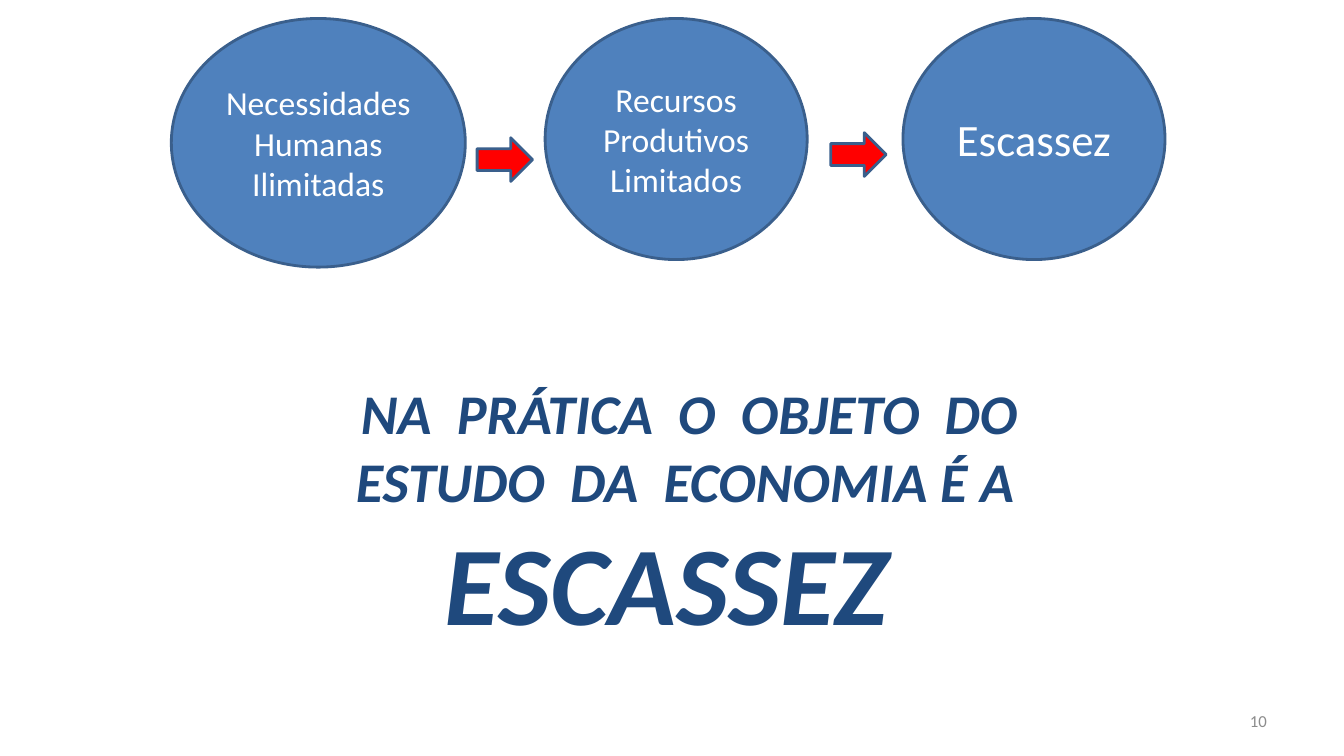
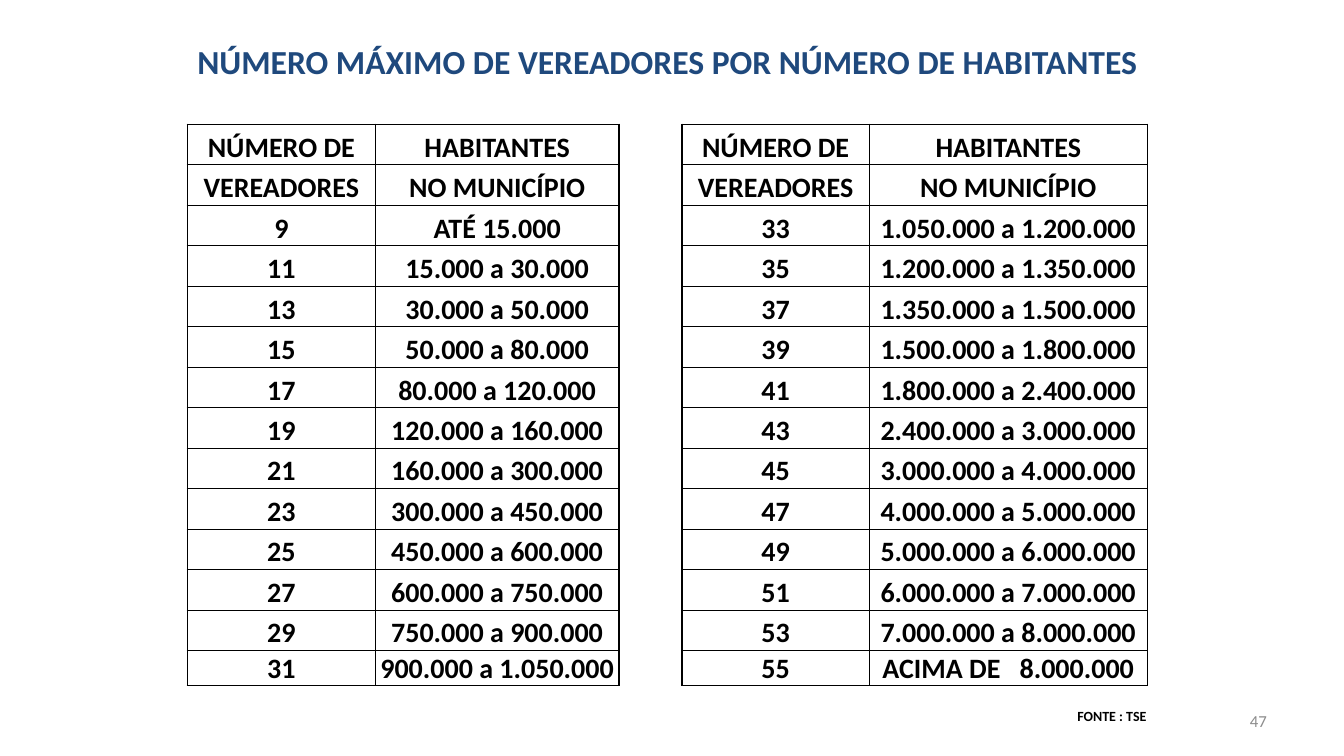
from itertools import pairwise

from lxml import etree
from pptx import Presentation, util as u
from pptx.dml.color import RGBColor
from pptx.enum import shapes, text
from pptx.oxml import ns

# Grid: 160 columns by 90 rows, each cell a twelfth of an inch
COLUMNS, ROWS = 160, 90
CELL = u.Inches(1) // 12

NAVY = RGBColor(0x1F, 0x49, 0x7D)
BLUE = RGBColor(0x4F, 0x81, 0xBD)
OUTLINE = RGBColor(0x3A, 0x5F, 0x8C)
RED = RGBColor(0xFF, 0x00, 0x00)
WHITE = RGBColor(0xFF, 0xFF, 0xFF)
BLACK = RGBColor(0x00, 0x00, 0x00)
GRAY = RGBColor(0x8C, 0x8C, 0x8C)

LEFT, CENTER, RIGHT = text.PP_ALIGN.LEFT, text.PP_ALIGN.CENTER, text.PP_ALIGN.RIGHT
MIDDLE, BOTTOM = text.MSO_ANCHOR.MIDDLE, text.MSO_ANCHOR.BOTTOM
NO_GRID_STYLE = "{2D5ABB26-0587-4C30-8999-92F81FD0307C}"


def cells(count):
    return u.Emu(round(count * CELL))


class Slides:
    """Shared style, the deck and its current page."""

    font = "Calibri"

    def __init__(self):
        self.deck = Presentation()
        self.deck.slide_width = cells(COLUMNS)
        self.deck.slide_height = cells(ROWS)

    def new_page(self, number):
        self.page = self.deck.slides.add_slide(self.deck.slide_layouts[6])
        self.text_box((114.7, 83.4, 37.3, 4.8), [str(number)], 12, GRAY, RIGHT, MIDDLE)

    def set_text(self, frame, lines, size, color, align, bold=False, italic=False):
        frame.text = "\n".join(lines)
        for para in frame.paragraphs:
            para.alignment = align
            for span in para.runs:
                font = span.font
                font.name, font.size = self.font, u.Pt(size)
                font.bold, font.italic = bold, italic
                font.color.rgb = color

    def text_box(self, area, lines, size, color, align, anchor, **style):
        box = self.page.shapes.add_textbox(*map(cells, area))
        frame = box.text_frame
        frame.word_wrap = True
        frame.vertical_anchor = anchor
        self.set_text(frame, lines, size, color, align, **style)
        return frame

    def shape(self, preset, area, fill, lines=(), size=24):
        shape = self.page.shapes.add_shape(preset, *map(cells, area))
        shape.shadow.inherit = False
        shape.fill.solid()
        shape.fill.fore_color.rgb = fill
        shape.line.color.rgb = OUTLINE
        shape.line.width = u.Pt(2)
        if lines:
            shape.text_frame.vertical_anchor = MIDDLE
            self.set_text(shape.text_frame, lines, size, WHITE, CENTER)

    def table(self, left, top, widths, heights):
        area = (left, top, sum(widths), sum(heights))
        table = self.page.shapes.add_table(
            len(heights), len(widths), *map(cells, area)).table
        table.first_row = table.horz_banding = False
        table._tbl.tblPr.find(ns.qn("a:tableStyleId")).text = NO_GRID_STYLE
        for column, width in zip(table.columns, widths):
            column.width = cells(width)
        for row, height in zip(table.rows, heights):
            row.height = cells(height)
        for cell in table.iter_cells():
            cell.margin_left = cell.margin_right = cell.margin_top = u.Inches(0.01)
            cell.margin_bottom = 0
            cell.vertical_anchor = BOTTOM
            cell.fill.background()
            # A small end mark lets empty rows stay low
            etree.SubElement(cell.text_frame.paragraphs[0]._p,
                             ns.qn("a:endParaRPr"), sz="800")
        return table

    def cell_text(self, cell, words, size=20, color=BLACK, align=CENTER):
        self.set_text(cell.text_frame, [words], size, color, align, bold=True)

    def cell_borders(self, cell, weights):
        """Draw the sides named in weights (L, R, T, B), in points."""
        props = cell._tc.get_or_add_tcPr()
        sides = [(side, weights[side]) for side in "LRTB" if weights.get(side)]
        for place, (side, points) in enumerate(sides):
            line = etree.Element(ns.qn(f"a:ln{side}"), w=str(u.Pt(points)))
            fill = etree.SubElement(line, ns.qn("a:solidFill"))
            etree.SubElement(fill, ns.qn("a:srgbClr"), val=str(BLACK))
            props.insert(place, line)


def scarcity_page(slides):
    slides.new_page(10)

    # Closing statement, each line with its own indent
    frame = slides.text_box(
        (27.8, 41.3, 106.8, 36.4),
        ["NA  PRÁTICA  O  OBJETO  DO", "ESTUDO  DA  ECONOMIA É A", "ESCASSEZ"],
        40, NAVY, LEFT, BOTTOM, bold=True, italic=True)
    for para, indent in zip(frame.paragraphs, (14, 13.4, 24)):
        props = para._p.get_or_add_pPr()
        props.set("marL", str(cells(indent)))
        props.set("indent", "0")
    frame.paragraphs[-1].runs[0].font.size = u.Pt(80)

    # Chain of ideas
    oval = shapes.MSO_SHAPE.OVAL
    top = 2.2
    slides.shape(oval, (20.4, top, 35, 29.6), BLUE,
                 ["Necessidades Humanas", "Ilimitadas"])
    slides.shape(oval, (64.9, top, 31.2, 28.7), BLUE,
                 ["Recursos", "Produtivos", "Limitados"])
    slides.shape(oval, (107.5, top, 31.2, 28.7), BLUE, ["Escassez"], 32)
    for left, arrow_top in ((56.8, 16.4), (98.9, 15.8)):
        slides.shape(shapes.MSO_SHAPE.RIGHT_ARROW, (left, arrow_top, 6.6, 5.2), RED)


def councillors_page(slides):
    slides.new_page(47)
    widths = (22.4, 29, 7.5, 22.3, 33.1)
    heights = [2.2, 5.2, 4.9] + [4.82] * 13 + [4.1, 4.8]
    table = slides.table(22.3, 2.5, widths, heights)
    title_row, head, first, per_block = 1, 3, 5, 12
    last_edge = first + per_block

    # Title and source
    title = table.cell(title_row, 0)
    title.merge(table.cell(title_row, len(widths) - 1))
    slides.cell_text(title, "NÚMERO MÁXIMO DE VEREADORES POR NÚMERO DE HABITANTES",
                     24, NAVY)
    slides.cell_text(table.cell(last_edge, 4), "FONTE : TSE", 10, align=RIGHT)

    # Population bands, in thousands
    limits = (15, 30, 50, 80, 120, 160, 300, 450, 600, 750, 900, 1050, 1200, 1350,
              1500, 1800, 2400, 3000, 4000, 5000, 6000, 7000, 8000)
    labels = [f"{limit * 1000:,}".replace(",", ".") for limit in limits]
    bands = [f"ATÉ {labels[0]}"]
    bands += [f"{low} a {high}" for low, high in pairwise(labels)]
    bands.append(f"ACIMA DE   {labels[-1]}")

    # Two blocks side by side: seats start at 9 and rise by 2
    for block, column in enumerate((0, 3)):
        rows = [("NÚMERO DE", "HABITANTES"), ("VEREADORES", "NO MUNICÍPIO")]
        start = block * per_block
        rows += [(str(9 + 2 * i), bands[i]) for i in range(start, start + per_block)]
        for row, pair in enumerate(rows, head):
            for offset, words in enumerate(pair):
                slides.cell_text(table.cell(row, column + offset), words)

    # Rules: heavy around heads and blocks, light inside
    across = {edge: 0.5 for edge in range(first, last_edge)}
    across |= {head: 1, first: 1, last_edge: 1}
    down = (1, 0.5, 1, 1, 0.5, 1)
    for row in range(head, last_edge):
        for column in (0, 1, 3, 4):
            slides.cell_borders(table.cell(row, column), {
                "L": down[column], "R": down[column + 1],
                "T": across.get(row), "B": across.get(row + 1)})


def main():
    slides = Slides()
    scarcity_page(slides)
    councillors_page(slides)
    slides.deck.save("out.pptx")


if __name__ == "__main__":
    main()
